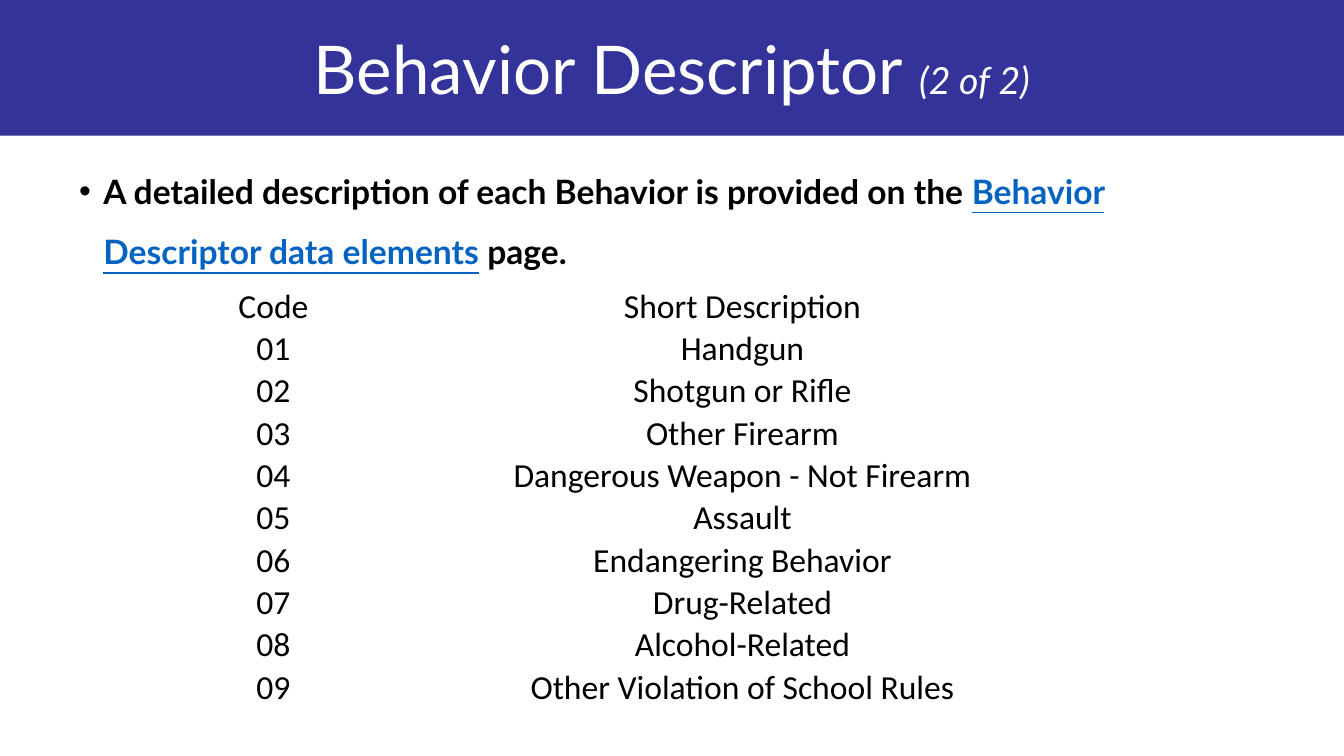
from pptx import Presentation
from pptx.dml.color import RGBColor
from pptx.enum.shapes import MSO_SHAPE
from pptx.enum.text import MSO_ANCHOR, MSO_AUTO_SIZE, PP_ALIGN
from pptx.util import Pt
from lxml.etree import SubElement
from pptx.oxml.ns import qn

INDIGO = RGBColor(0x33, 0x33, 0x99)
WHITE = RGBColor(0xFF, 0xFF, 0xFF)
BLACK = RGBColor(0, 0, 0)
LINK_BLUE = RGBColor(0x05, 0x63, 0xC1)

BANNER_HEIGHT = 72.7
COLUMN_WIDTHS = [75.6, 427]
HEADER_HEIGHT, ROW_HEIGHT = 15, 18
BEHAVIORS = [
    "Handgun",
    "Shotgun or Rifle",
    "Other Firearm",
    "Dangerous Weapon - Not Firearm",
    "Assault",
    "Endangering Behavior",
    "Drug-Related",
    "Alcohol-Related",
    "Other Violation of School Rules",
]


def add_run(paragraph, text, size, color, font="Lato"):
    run = paragraph.add_run()
    run.text = text
    run.font.name = font
    run.font.size = Pt(size)
    run.font.color.rgb = color
    return run


presentation = Presentation()
presentation.slide_width = Pt(720)
presentation.slide_height = Pt(405)
slide = presentation.slides.add_slide(presentation.slide_layouts[5])

# Banner, sent behind the title
banner = slide.shapes.add_shape(
    MSO_SHAPE.RECTANGLE, Pt(-0.7), Pt(0), Pt(720.7), Pt(BANNER_HEIGHT))
banner.shadow.inherit = False
banner.fill.solid()
banner.fill.fore_color.rgb = INDIGO
banner.line.fill.background()
slide.shapes._spTree.insert(2, banner._element)

# Title
title = slide.shapes.title
title.left, title.top = Pt(0), Pt(0)
title.width, title.height = Pt(720), Pt(BANNER_HEIGHT)
title.text_frame.auto_size = MSO_AUTO_SIZE.NONE
title.text_frame.vertical_anchor = MSO_ANCHOR.MIDDLE
paragraph = title.text_frame.paragraphs[0]
paragraph.alignment = PP_ALIGN.CENTER
add_run(paragraph, "Behavior Descriptor ", 36, WHITE)
add_run(paragraph, "(2 of 2)", 20, WHITE).font.italic = True

# Table of behavior codes
rows = [("Code", "Short Description")]
rows += [(f"{number:02}", name) for number, name in enumerate(BEHAVIORS, 1)]
table = slide.shapes.add_table(
    len(rows), 2, Pt(108.7), Pt(152.6), Pt(sum(COLUMN_WIDTHS)),
    Pt(HEADER_HEIGHT + ROW_HEIGHT * len(BEHAVIORS))).table
table.first_row = False
table.horz_banding = False
for column, width in zip(table.columns, COLUMN_WIDTHS):
    column.width = Pt(width)
for row_index, row in enumerate(rows):
    table.rows[row_index].height = Pt(ROW_HEIGHT if row_index else HEADER_HEIGHT)
    for column_index, text in enumerate(row):
        cell = table.cell(row_index, column_index)
        cell.fill.background()
        cell.vertical_anchor = MSO_ANCHOR.BOTTOM
        cell.margin_left = cell.margin_right = cell.margin_top = Pt(0.7)
        cell.margin_bottom = Pt(0)
        paragraph = cell.text_frame.paragraphs[0]
        paragraph.alignment = PP_ALIGN.CENTER
        add_run(paragraph, text, 18, BLACK, "Calibri")

# Introductory bullet
intro = slide.shapes.add_textbox(Pt(35.3), Pt(77), Pt(648.7), Pt(46))
intro.text_frame.word_wrap = True
paragraph = intro.text_frame.paragraphs[0]
paragraph.line_spacing = 1.5
paragraph.space_after = Pt(1.8)
properties = paragraph._p.get_or_add_pPr()
properties.set("marL", str(Pt(13)))
properties.set("indent", str(Pt(-13)))
SubElement(properties, qn("a:buFont")).set("typeface", "Arial")
SubElement(properties, qn("a:buChar")).set("char", "•")
for text, color, underline in [
    ("A detailed description of each Behavior is provided on the ", BLACK, False),
    ("Behavior Descriptor data elements", LINK_BLUE, True),
    (" page.", BLACK, False),
]:
    run = add_run(paragraph, text, 18, color)
    run.font.bold = True
    run.font.underline = underline

presentation.save("out.pptx")
